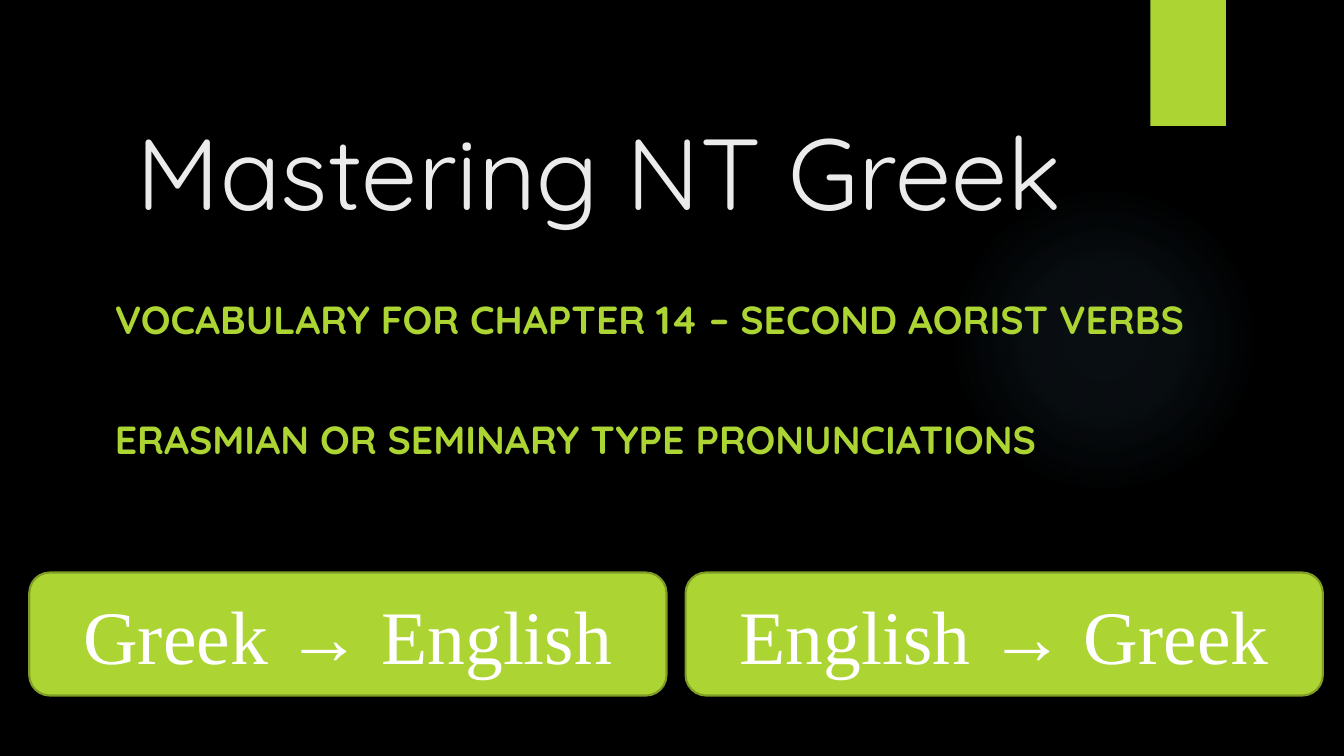
"""Build the title slide of a Greek vocabulary lesson."""
from dataclasses import dataclass

from lxml import etree
from pptx import Presentation
from pptx import util as u
from pptx.dml.color import RGBColor
from pptx.enum import shapes, text
from pptx.oxml import ns

EMU_PER_PX = 9144
BLACK = RGBColor(0x00, 0x00, 0x00)
WHITE = RGBColor(0xFF, 0xFF, 0xFF)
PALE = RGBColor(0xEB, 0xEB, 0xEB)
LIME = RGBColor(0xAC, 0xD4, 0x33)
OLIVE = RGBColor(0x7F, 0x9D, 0x26)
SKY = RGBColor(0x7A, 0xC4, 0xF0)
GLOW_STOPS = ((0, 7), (36, 6), (69, 0))


@dataclass(frozen=True)
class Area:
    """A rectangle in px."""

    left: int
    top: int
    width: int
    height: int

    def emu(self) -> tuple[int, ...]:
        """Return the four lengths in EMU."""
        return tuple(value * EMU_PER_PX for value in (self.left, self.top, self.width, self.height))


@dataclass(frozen=True)
class Style:
    """The look of a text."""

    font: str
    size: int
    color: RGBColor
    bold: bool = False


@dataclass(frozen=True)
class Caption:
    """A text block with one paragraph per line."""

    area: Area
    lines: tuple[str, ...]
    style: Style
    anchor: text.MSO_ANCHOR
    gap: int = 0


TITLE_STYLE = Style("Quicksand", 72, PALE)
SUBTITLE_STYLE = Style("Quicksand", 28, LIME, bold=True)
BUTTON_STYLE = Style("Times New Roman", 54, WHITE)
GLOW = Area(941, 183, 308, 308)
TAB = Area(1141, 0, 75, 125)
BUTTON = Area(29, 568, 632, 122)
BUTTON_STEP = 651
BUTTON_LABELS = ("Greek → English", "English → Greek")
CAPTIONS = (
    Caption(Area(126, 70, 1004, 159), ("Mastering NT Greek",), TITLE_STYLE, text.MSO_ANCHOR.BOTTOM),
    Caption(
        Area(104, 288, 1144, 269),
        (
            "VOCABULARY FOR CHAPTER 14 – SECOND AORIST VERBS",
            "ERASMIAN OR SEMINARY TYPE PRONUNCIATIONS",
        ),
        SUBTITLE_STYLE,
        text.MSO_ANCHOR.TOP,
        gap=52,
    ),
)


def style_spans(para, style: Style) -> None:
    """Format every run of a paragraph."""
    for span in para.runs:
        span.font.name = style.font
        span.font.size = u.Pt(style.size)
        span.font.bold = style.bold
        span.font.color.rgb = style.color


def add_block(page, kind: shapes.MSO_SHAPE, area: Area, fill: RGBColor):
    """Add a flat shape without an outline."""
    block = page.shapes.add_shape(kind, *area.emu())
    block.shadow.inherit = False
    block.fill.solid()
    block.fill.fore_color.rgb = fill
    block.line.fill.background()
    return block


def add_glow(page) -> None:
    """Add the soft circle that fades outwards."""
    glow = add_block(page, shapes.MSO_SHAPE.OVAL, GLOW, SKY)
    solid = glow.element.spPr.find(ns.qn("a:solidFill"))
    gradient = etree.Element(ns.qn("a:gradFill"), rotWithShape="1")
    stops = etree.SubElement(gradient, ns.qn("a:gsLst"))
    for position, opacity in GLOW_STOPS:
        stop = etree.SubElement(stops, ns.qn("a:gs"), pos=str(position * 1000))
        color = etree.SubElement(stop, ns.qn("a:srgbClr"), val=str(SKY))
        etree.SubElement(color, ns.qn("a:alpha"), val=str(opacity * 1000))
    route = etree.SubElement(gradient, ns.qn("a:path"), path="circle")
    etree.SubElement(route, ns.qn("a:fillToRect"), {side: "50000" for side in "ltrb"})
    solid.getparent().replace(solid, gradient)


def add_caption(page, caption: Caption) -> None:
    """Add a wrapped text box."""
    frame = page.shapes.add_textbox(*caption.area.emu()).text_frame
    frame.word_wrap = True
    frame.vertical_anchor = caption.anchor
    frame.margin_bottom = 0
    frame.text = "\n".join(caption.lines)
    for index, para in enumerate(frame.paragraphs):
        if index:
            para.space_before = u.Pt(caption.gap)
        style_spans(para, caption.style)


def add_button(page, area: Area, label: str) -> None:
    """Add a rounded button with a centred label."""
    button = add_block(page, shapes.MSO_SHAPE.ROUNDED_RECTANGLE, area, LIME)
    button.line.color.rgb = OLIVE
    button.line.width = u.Pt(1.5)
    frame = button.text_frame
    frame.vertical_anchor = text.MSO_ANCHOR.MIDDLE
    frame.text = label
    para = frame.paragraphs[0]
    para.alignment = text.PP_ALIGN.CENTER
    style_spans(para, BUTTON_STYLE)


def main() -> None:
    """Build and save the deck."""
    deck = Presentation()
    deck.slide_width, deck.slide_height = 1333 * EMU_PER_PX, 750 * EMU_PER_PX
    page = deck.slides.add_slide(deck.slide_layouts[6])
    page.background.fill.solid()
    page.background.fill.fore_color.rgb = BLACK
    add_glow(page)
    add_block(page, shapes.MSO_SHAPE.RECTANGLE, TAB, LIME)
    for caption in CAPTIONS:
        add_caption(page, caption)
    for index, label in enumerate(BUTTON_LABELS):
        left = BUTTON.left + index * BUTTON_STEP
        add_button(page, Area(left, BUTTON.top, BUTTON.width, BUTTON.height), label)
    deck.save("out.pptx")


if __name__ == "__main__":
    main()
